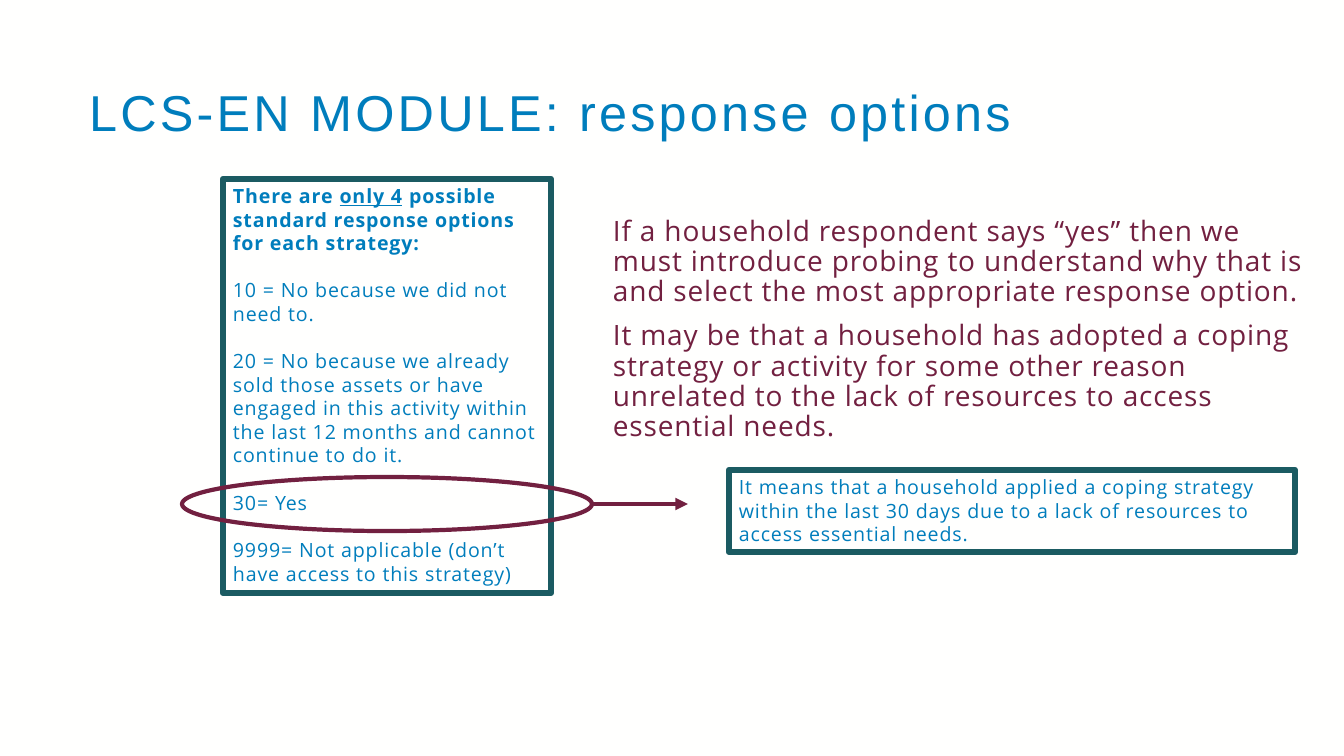
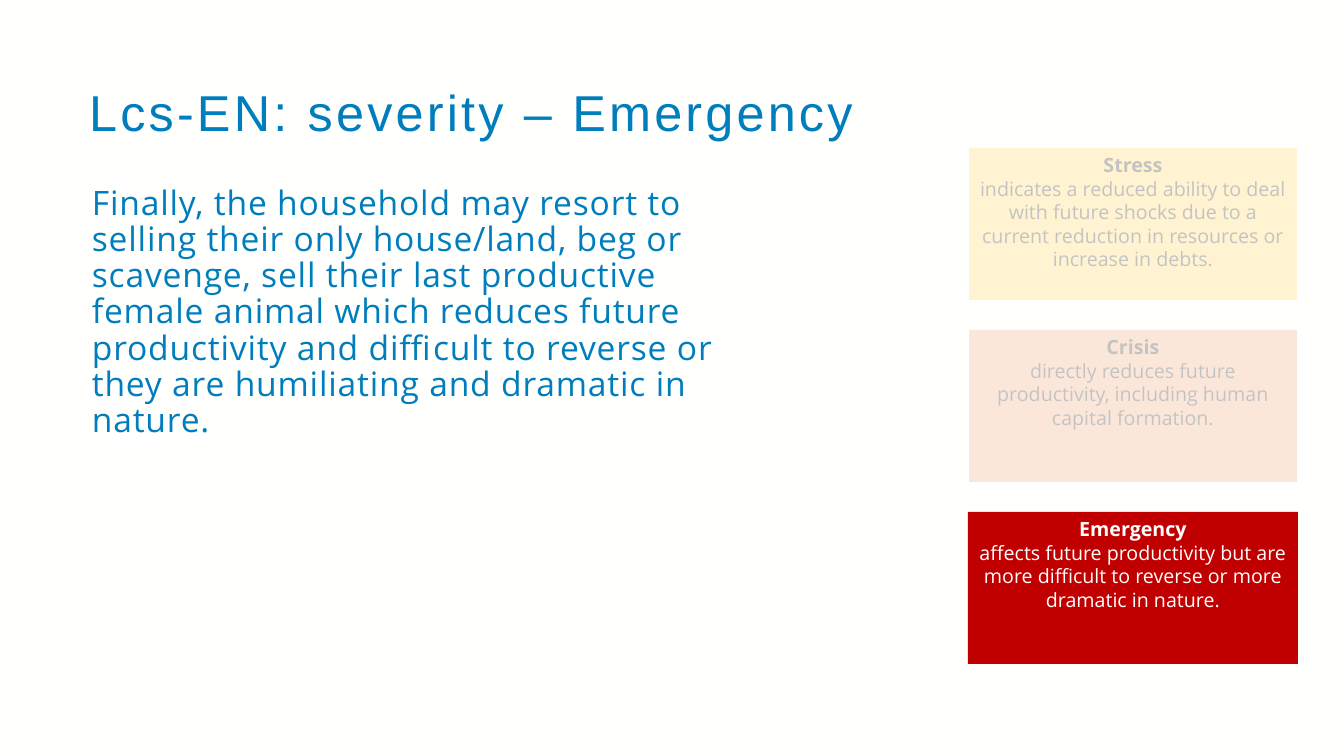
"""Build two slides on the response options and severity levels of the LCS-EN module."""
from dataclasses import dataclass

from lxml.etree import SubElement
from pptx import Presentation
from pptx.dml.color import RGBColor
from pptx.enum.shapes import MSO_CONNECTOR, MSO_SHAPE
from pptx.enum.text import MSO_ANCHOR, MSO_AUTO_SIZE, PP_ALIGN
from pptx.oxml.ns import qn
from pptx.util import Pt

PX = 914400 / 100.8


def px(n):
    return round(n * PX)


@dataclass(frozen=True)
class Theme:
    background: str = "FFFFFE"
    blue: str = "007DBC"
    teal: str = "1B5B62"
    plum: str = "722040"
    dark: str = "3B3838"
    white: str = "FFFFFF"
    yellow: str = "FFD966"
    orange: str = "F4B183"
    red: str = "C00000"
    title_font: str = "Arial"
    body_font: str = "Open Sans"
    title_size: int = 36
    lead_size: int = 24
    text_size: int = 20
    small_size: int = 14
    title_tracking: int = 230
    body_tracking: int = 60
    tight: float = 0.9
    frame_width: float = 4.5
    mark_width: float = 3
    veil_width: float = 1
    veil_opacity: int = 70


T = Theme()


class Deck:
    def __init__(self):
        self.prs = Presentation()
        self.prs.slide_width, self.prs.slide_height = px(1344), px(756)
        fill = self.prs.slide_master.background.fill
        fill.solid()
        fill.fore_color.rgb = RGBColor.from_string(T.background)

    def slide(self, title):
        self.s = self.prs.slides.add_slide(self.prs.slide_layouts[5])
        sp = self.s.shapes.title
        sp.left, sp.top, sp.width, sp.height = map(px, (79, 79, 1219, 73))
        self.put_text(sp, [title], T.title_size, T.blue, font=T.title_font,
                      tracking=T.title_tracking, spacing=T.tight, anchor=MSO_ANCHOR.MIDDLE)

    def put_text(self, sp, paragraphs, size, color, font=T.body_font, tracking=0,
                 spacing=1.0, gap=0, align=PP_ALIGN.LEFT, anchor=MSO_ANCHOR.TOP):
        tf = sp.text_frame
        frame_format = {"word_wrap": True, "auto_size": MSO_AUTO_SIZE.NONE,
                        "vertical_anchor": anchor}
        for name, value in frame_format.items():
            setattr(tf, name, value)
        for i, runs in enumerate(paragraphs):
            p = tf.add_paragraph() if i else tf.paragraphs[0]
            paragraph_format = {"alignment": align, "line_spacing": spacing,
                                "space_before": Pt(gap if i else 0)}
            for name, value in paragraph_format.items():
                setattr(p, name, value)
            for text, extra in [(runs, {})] if isinstance(runs, str) else runs:
                r = p.add_run()
                r.text = text
                run_format = {"name": font, "size": Pt(size), "bold": False} | extra
                for name, value in run_format.items():
                    setattr(r.font, name, value)
                r.font.color.rgb = RGBColor.from_string(color)
                if tracking:
                    r._r.get_or_add_rPr().set("spc", str(tracking))

    def text(self, box, paragraphs, size, color, **style):
        sp = self.s.shapes.add_textbox(*map(px, box))
        self.put_text(sp, paragraphs, size, color, **style)

    def shape(self, box, kind=MSO_SHAPE.RECTANGLE, fill=None, opacity=100, line=None, width=0):
        sp = self.s.shapes.add_shape(kind, *map(px, box))
        sp.shadow.inherit = False
        if fill:
            sp.fill.solid()
            sp.fill.fore_color.rgb = RGBColor.from_string(fill)
        else:
            sp.fill.background()
        if opacity < 100:
            clr = sp.element.spPr.find(f"{qn('a:solidFill')}/{qn('a:srgbClr')}")
            SubElement(clr, qn("a:alpha"), val=str(opacity * 1000))
        if line:
            self.outline(sp, line, width)
        else:
            sp.line.fill.background()
        return sp

    def outline(self, sp, color, width):
        sp.line.color.rgb = RGBColor.from_string(color)
        sp.line.width = Pt(width)

    def frame(self, box, paragraphs, gap=0):
        sp = self.shape(box, line=T.teal, width=T.frame_width)
        self.put_text(sp, paragraphs, T.small_size, T.blue, tracking=T.body_tracking, gap=gap)

    def card(self, box, fill, color, heading, body):
        sp = self.shape(box, fill=fill)
        self.put_text(sp, [[(heading, {"bold": True})], body], T.small_size, color,
                      align=PP_ALIGN.CENTER)

    def veil(self, box):
        self.shape(box, fill=T.white, opacity=T.veil_opacity, line=T.white, width=T.veil_width)

    def arrow(self, x1, y1, x2, y2):
        c = self.s.shapes.add_connector(MSO_CONNECTOR.STRAIGHT, *map(px, (x1, y1, x2, y2)))
        self.outline(c, T.plum, T.mark_width)
        spPr = c.element.spPr
        SubElement(spPr.find(qn("a:ln")), qn("a:tailEnd"), type="triangle")
        SubElement(spPr, qn("a:effectLst"))


def response_options(deck):
    deck.slide("LCS-EN MODULE: response options")
    bold = {"bold": True}
    deck.frame((223, 179, 328, 414), [
        [("There are ", bold), ("only 4", bold | {"underline": True}),
         (" possible standard response options for each strategy:", bold)],
        "10 = No because we did not need to.",
        "20 = No because we already sold those assets or have engaged in this activity "
        "within the last 12 months and cannot continue to do it.",
        "30= Yes",
        "9999= Not applicable (don’t have access to this strategy)",
    ], gap=17)
    deck.frame((729, 470, 566, 82), [
        "It means that a household applied a coping strategy within the last 30 days "
        "due to a lack of resources to access essential needs."])
    deck.arrow(592, 504, 688, 504)
    deck.shape((182, 477, 410, 54), MSO_SHAPE.OVAL, line=T.plum, width=T.mark_width)
    deck.text((603, 212, 711, 238), [
        "If a household respondent says “yes” then we must introduce probing to understand "
        "why that is and select the most appropriate response option.",
        "It may be that a household has adopted a coping strategy or activity for some other "
        "reason unrelated to the lack of resources to access essential needs.",
    ], T.text_size, T.plum, tracking=T.body_tracking, spacing=T.tight, gap=10)


def severity(deck):
    deck.slide("Lcs-EN: severity – Emergency")
    deck.text((82, 181, 662, 430), [
        "Finally, the household may resort to selling their only house/land, beg or "
        "scavenge, sell their last productive female animal which reduces future "
        "productivity and difficult to reverse or they are humiliating and dramatic "
        "in nature.",
    ], T.lead_size, T.blue, tracking=T.body_tracking, spacing=T.tight)
    cards = [
        (T.yellow, T.dark, True, "Stress",
         "indicates a reduced ability to deal with future shocks due to a current "
         "reduction in resources or increase in debts."),
        (T.orange, T.dark, True, "Crisis",
         "directly reduces future productivity, including human capital formation."),
        (T.red, T.white, False, "Emergency",
         "affects future productivity but are more difficult to reverse or more "
         "dramatic in nature."),
    ]
    left, top, width, height, step = 968, 148, 330, 152, 182
    for i, (fill, color, faded, heading, body) in enumerate(cards):
        y = top + i * step
        deck.card((left, y, width, height), fill, color, heading, body)
        if faded:
            deck.veil((left, y - 2, width, height + 6))


def main():
    deck = Deck()
    response_options(deck)
    severity(deck)
    deck.prs.save("out.pptx")


if __name__ == "__main__":
    main()
